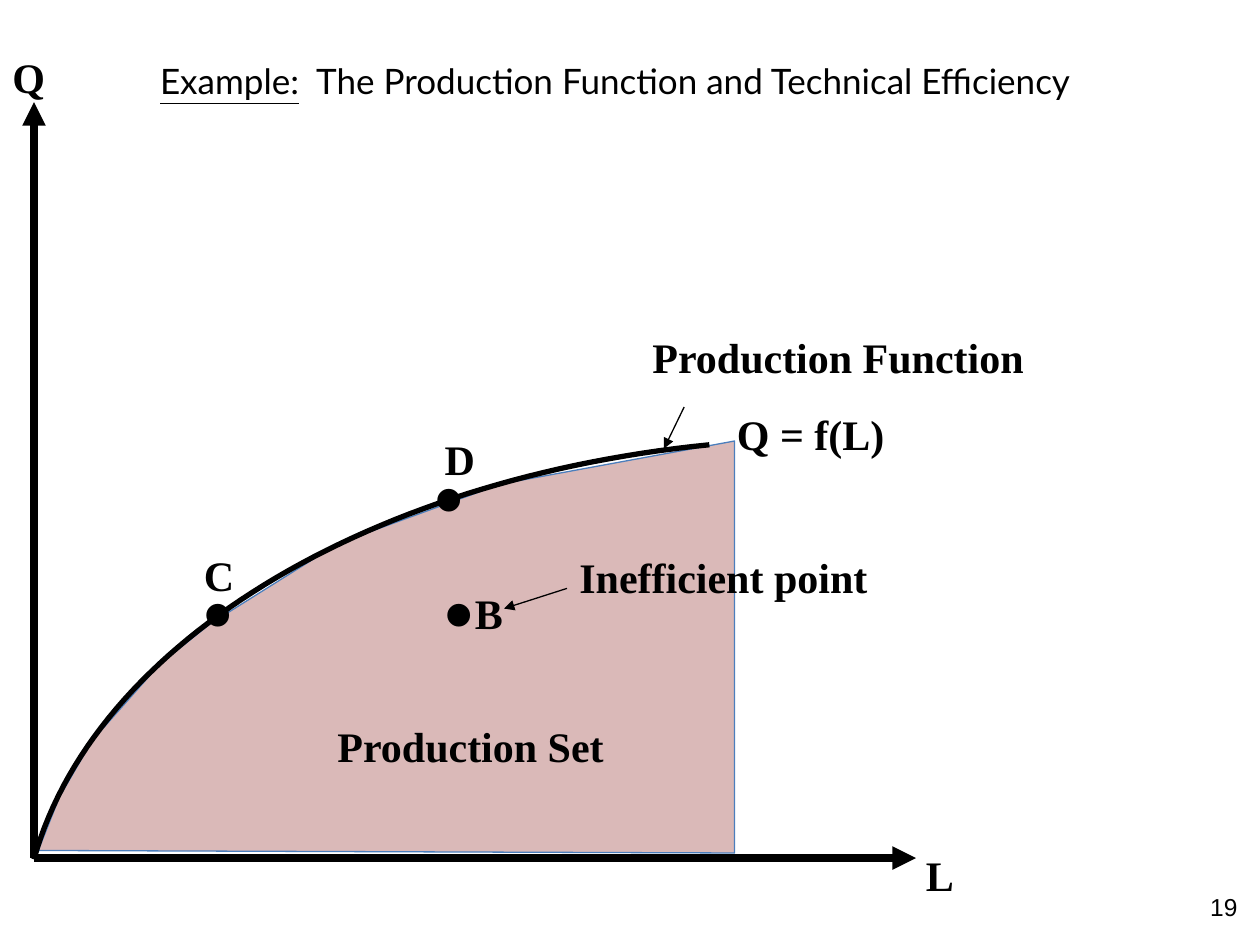
from typing import NamedTuple

from lxml.etree import SubElement
from pptx import Presentation
from pptx.dml.color import RGBColor
from pptx.enum.shapes import MSO_CONNECTOR
from pptx.enum.text import MSO_ANCHOR, MSO_AUTO_SIZE, PP_ALIGN
from pptx.oxml.ns import qn
from pptx.util import Emu, Inches, Pt

COLORS = {"ink": "000000", "area": "953735", "area_line": "4B7EBC"}
LABEL_FONT = "Times New Roman"
AREA_OPACITY = 35

# The slide is a grid of 10 columns by 7.5 square rows
SLIDE_WIDTH, SLIDE_HEIGHT = Inches(10), Inches(7.5)
COLUMN = SLIDE_WIDTH / 10

Point = tuple[float, float]


class Label(NamedTuple):
    text: str
    left: float
    top: float
    width: float
    height: float = 0.5
    size: int = 24


class Arrow(NamedTuple):
    start: Point
    end: Point
    weight: float


ORIGIN = (0.27, 6.81)
ARROWS = [
    Arrow(ORIGIN, (7.27, 6.81), 4.5),
    Arrow(ORIGIN, (0.27, 0.81), 4.5),
    Arrow((5.43, 3.23), (5.27, 3.56), 0.75),
    Arrow((4.5, 4.67), (4, 4.83), 0.75),
]
LABELS = [
    Label("Q = f(L)", 5.75, 3.19, 1.37),
    Label("L", 7.25, 6.69, 0.42),
    Label("Q", 0, 0.36, 0.54),
    Label("C", 1.52, 4.31, 0.44),
    Label("D", 3.43, 3.39, 0.44),
    Label("B", 3.67, 4.61, 0.42),
    Label("Production Set", 2.58, 5.67, 2.32),
    Label("Inefficient point", 4.5, 4.33, 2.49),
    Label("Production Function", 5.08, 2.58, 3.15),
]
MARKER_CORNERS = [(3.43, 4.39), (1.52, 4.39), (3.35, 3.48)]
PRODUCTION_SET = [
    (0.28, 6.75), (5.83, 6.77), (5.83, 3.5), (3.98, 3.84), (2.69, 4.31),
    (1.67, 4.95), (1.27, 5.27), (0.73, 5.88), (0.47, 6.33), (0.28, 6.81),
]
CURVE_CONTROLS = [(0.27, 6.82), (0.74, 5.12), (2.9, 3.8), (5.63, 3.53)]


def grid(value: float) -> Emu:
    return Emu(round(value * COLUMN))


def color(name: str) -> RGBColor:
    return RGBColor.from_string(COLORS[name])


def place(shape, left: float, top: float, width: float, height: float) -> None:
    shape.left, shape.top = grid(left), grid(top)
    shape.width, shape.height = grid(width), grid(height)


def format_run(run, font_name: str, size: float, bold: bool = False) -> None:
    run.font.name = font_name
    run.font.size = Pt(size)
    run.font.bold = bold
    run.font.color.rgb = color("ink")


def draw_label(slide, label: Label) -> None:
    box = slide.shapes.add_textbox(0, 0, 0, 0)
    place(box, label.left, label.top, label.width, label.height)
    box.text_frame.word_wrap = False
    box.text_frame.text = label.text
    format_run(box.text_frame.paragraphs[0].runs[0], LABEL_FONT, label.size, bold=True)


def draw_arrow(slide, arrow: Arrow) -> None:
    ends = [grid(value) for value in arrow.start + arrow.end]
    connector = slide.shapes.add_connector(MSO_CONNECTOR.STRAIGHT, *ends)
    connector.line.color.rgb = color("ink")
    connector.line.width = Pt(arrow.weight)
    SubElement(connector.line._get_or_add_ln(), qn("a:tailEnd"), type="triangle")
    SubElement(connector._element.spPr, qn("a:effectLst"))


def draw_outline(slide, points: list[Point], line_color: str, weight: float):
    corners = [(grid(x), grid(y)) for x, y in points]
    builder = slide.shapes.build_freeform(*corners[0])
    builder.add_line_segments(corners[1:], close=False)
    shape = builder.convert_to_shape()
    shape.shadow.inherit = False
    shape.fill.background()
    shape.line.color.rgb = color(line_color)
    shape.line.width = Pt(weight)
    return shape


def bezier(controls: list[Point], steps: int = 60) -> list[Point]:
    def at(t: float) -> Point:
        weights = ((1 - t) ** 3, 3 * t * (1 - t) ** 2, 3 * t**2 * (1 - t), t**3)
        x, y = (sum(w * p[axis] for w, p in zip(weights, controls)) for axis in (0, 1))
        return x, y

    return [at(step / steps) for step in range(steps + 1)]


def draw_title(slide) -> None:
    title = slide.shapes.title
    place(title, 1.17, 0.42, 8.5, 0.44)
    frame = title.text_frame
    frame.auto_size = MSO_AUTO_SIZE.NONE
    frame.vertical_anchor = MSO_ANCHOR.MIDDLE
    paragraph = frame.paragraphs[0]
    paragraph.alignment = PP_ALIGN.LEFT
    for text, underlined in (
        ("Example:", True),
        ("  The Production Function and Technical Efficiency", False),
    ):
        run = paragraph.add_run()
        run.text = text
        format_run(run, "Lato", 20)
        run.font.underline = underlined


def draw_slide_number(slide) -> None:
    box = slide.shapes.add_textbox(0, 0, 0, 0)
    place(box, 9.17, 7, 0.75, 0.4)
    box.text_frame.word_wrap = True
    box.text_frame.vertical_anchor = MSO_ANCHOR.MIDDLE
    box.text_frame.text = "19"
    paragraph = box.text_frame.paragraphs[0]
    paragraph.alignment = PP_ALIGN.RIGHT
    format_run(paragraph.runs[0], "Arial", 14)


def main() -> None:
    presentation = Presentation()
    presentation.slide_width, presentation.slide_height = SLIDE_WIDTH, SLIDE_HEIGHT
    slide = presentation.slides.add_slide(presentation.slide_layouts[5])

    # Shaded production set
    area = draw_outline(slide, PRODUCTION_SET, "area_line", 0.75)
    area.fill.solid()
    area.fill.fore_color.rgb = color("area")
    fill_color = area._element.spPr.find(qn("a:solidFill")).find(qn("a:srgbClr"))
    SubElement(fill_color, qn("a:alpha"), val=str(AREA_OPACITY * 1000))

    # Title and slide number
    draw_title(slide)
    draw_slide_number(slide)

    # Axes, pointers and production function
    for arrow in ARROWS:
        draw_arrow(slide, arrow)
    draw_outline(slide, bezier(CURVE_CONTROLS), "ink", 3)

    # Marked points and labels
    for left, top in MARKER_CORNERS:
        draw_label(slide, Label("•", left, top, 0.43, 0.9, 48))
    for label in LABELS:
        draw_label(slide, label)

    presentation.save("out.pptx")


if __name__ == "__main__":
    main()
